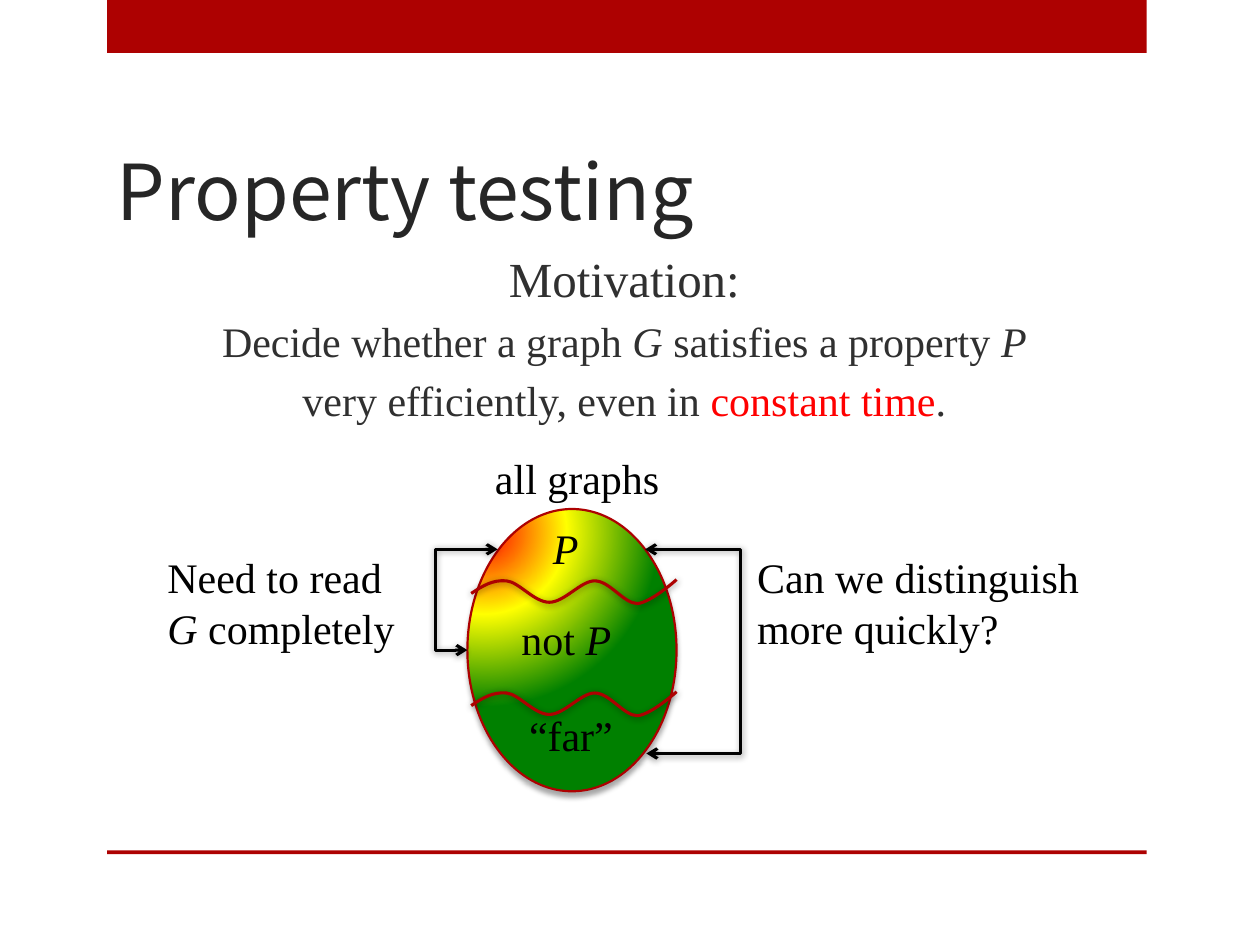
from dataclasses import dataclass
from pptx import Presentation
from pptx.dml.color import RGBColor
from pptx.enum.shapes import MSO_CONNECTOR as Link, MSO_SHAPE as Shape
from pptx.enum.text import MSO_ANCHOR as Anchor, PP_ALIGN as Align
from pptx.oxml import parse_xml
from pptx.util import Inches, Pt


@dataclass(frozen=True)
class Theme:
    red: str = "AD0101"
    title: str = "262626"
    body: str = "303030"
    accent: str = "FF0000"
    black: str = "000000"
    title_font: str = "Noto Sans CJK JP"
    body_font: str = "Times New Roman"
    title_size: int = 44
    lead_size: int = 28
    text_size: int = 24
    outline: float = 1.25
    stroke: float = 1.75
    gradient: tuple = ((0, "FF0000"), (47, "FFFF00"), (100, "008000"))
    glow_center: int = 8


THEME = Theme()
NAMESPACE = 'xmlns:a="http://schemas.openxmlformats.org/drawingml/2006/main"'

BARS = [(0.85, 0, 8.25, 0.42), (0.85, 6.75, 8.25, 0.03)]
TITLE = [[("Property testing", "")]]
MOTIVATION = [
    [("Motivation:", "lead")],
    [("Decide whether a graph ", ""), ("G", "italic"),
     (" satisfies a property ", ""), ("P", "italic")],
    [("very efficiently, even in ", ""), ("constant time", "accent"), (".", "")],
]
LABELS = [
    ((4.29, 4.1, 0.51, 0.5), [[("P", "italic")]]),
    ((3.83, 3.54, 1.52, 0.5), [[("all graphs", "")]]),
    ((1.23, 4.33, 2.05, 0.91),
     [[("Need to read", "")], [("G ", "italic"), ("completely", "")]]),
    ((4.04, 4.82, 1, 0.5), [[("not ", ""), ("P", "italic")]]),
    ((4.1, 5.58, 0.88, 0.5), [[("“far”", "")]]),
    ((5.91, 4.33, 2.78, 0.91),
     [[("Can we distinguish", "")], [("more quickly?", "")]]),
]
ALL_GRAPHS = (3.71, 4.04, 1.66, 2.24)
WAVE_TOPS = [4.6, 5.49]
WAVE_START = (3.74, 0.11)
WAVE_CURVES = [
    ((3.83, 0.05), (3.91, 0), (4.02, 0.01)),
    ((4.12, 0.02), (4.24, 0.18), (4.36, 0.18)),
    ((4.48, 0.18), (4.61, 0.01), (4.72, 0.01)),
    ((4.84, 0.01), (4.95, 0.19), (5.06, 0.19)),
    ((5.17, 0.18), (5.37, 0), (5.37, 0)),
]
BRACKETS = [
    ((3.95, 4.36), (3.71, 5.16), 3.46),
    ((5.12, 4.36), (5.13, 5.98), 5.89),
]


def color(value):
    return RGBColor.from_string(value)


def set_line(shape, value, width):
    shape.line.color.rgb = color(value)
    shape.line.width = Pt(width)


def add_shadow(shape, alpha, blur, distance, angle):
    shape._element.spPr.append(parse_xml(
        f'<a:effectLst {NAMESPACE}><a:outerShdw blurRad="{Pt(blur)}" '
        f'dist="{Pt(distance)}" dir="{angle * 60000}" rotWithShape="0">'
        f'<a:srgbClr val="{THEME.black}"><a:alpha val="{alpha * 1000}"/>'
        '</a:srgbClr></a:outerShdw></a:effectLst>'))


def add_text(page, place, paragraphs, ink=THEME.black, font=THEME.body_font,
             size=THEME.text_size, wrap=False, anchor=Anchor.TOP,
             align=Align.LEFT, before=0):
    frame = page.shapes.add_textbox(*map(Inches, place)).text_frame
    frame.word_wrap = wrap
    frame.vertical_anchor = anchor
    for index, pieces in enumerate(paragraphs):
        para = frame.add_paragraph() if index else frame.paragraphs[0]
        para.alignment = align
        para.space_before = Pt(before)
        for words, style in pieces:
            span = para.add_run()
            span.text = words
            span.font.name = font
            span.font.size = Pt(THEME.lead_size if style == "lead" else size)
            span.font.italic = style == "italic"
            span.font.color.rgb = color(THEME.accent if style == "accent" else ink)


def add_bar(page, place):
    bar = page.shapes.add_shape(Shape.RECTANGLE, *map(Inches, place))
    bar.shadow.inherit = False
    bar.fill.solid()
    bar.fill.fore_color.rgb = color(THEME.red)
    bar.line.fill.background()


def add_graph_set(page):
    oval = page.shapes.add_shape(Shape.OVAL, *map(Inches, ALL_GRAPHS))
    stops = "".join(f'<a:gs pos="{position * 1000}"><a:srgbClr val="{value}"/></a:gs>'
                    for position, value in THEME.gradient)
    near = THEME.glow_center * 1000
    far = 100000 - near
    oval._element.spPr.append(parse_xml(
        f'<a:gradFill {NAMESPACE} rotWithShape="1"><a:gsLst>{stops}</a:gsLst>'
        f'<a:path path="circle"><a:fillToRect l="{near}" t="{near}" '
        f'r="{far}" b="{far}"/></a:path></a:gradFill>'))
    set_line(oval, THEME.red, THEME.outline)
    add_shadow(oval, 35, 3, 3, 90)


def add_wave(page, top):
    start, *points = [(Inches(x), Inches(top + y)) for x, y in
                      [WAVE_START] + [point for curve in WAVE_CURVES for point in curve]]
    builder = page.shapes.build_freeform(*start)
    builder.add_line_segments(points, close=False)
    wave = builder.convert_to_shape()
    segments = wave._element.xpath(".//a:lnTo")
    outline = segments[0].getparent()
    for index in range(0, len(segments), 3):
        curve = parse_xml(f'<a:cubicBezTo {NAMESPACE}/>')
        for segment in segments[index:index + 3]:
            curve.append(segment[0])
            outline.remove(segment)
        outline.append(curve)
    wave.fill.background()
    set_line(wave, THEME.red, THEME.stroke)
    add_shadow(wave, 40, 4, 1, 88)


def add_bracket(page, start, end, turn):
    bracket = page.shapes.add_connector(Link.ELBOW, *map(Inches, start + end))
    bend = round((turn - start[0]) / (end[0] - start[0]) * 100000)
    guides = bracket._element.spPr.prstGeom.get_or_add_avLst()
    guides.append(parse_xml(f'<a:gd {NAMESPACE} name="adj1" fmla="val {bend}"/>'))
    set_line(bracket, THEME.black, THEME.stroke)
    for tag in ("headEnd", "tailEnd"):
        bracket.line._get_or_add_ln().append(
            parse_xml(f'<a:{tag} {NAMESPACE} type="arrow"/>'))
    add_shadow(bracket, 40, 4, 1, 88)


def main():
    deck = Presentation()
    deck.slide_width, deck.slide_height = Inches(10), Inches(7.5)
    page = deck.slides.add_slide(deck.slide_layouts[6])
    for place in BARS:
        add_bar(page, place)
    add_text(page, (0.83, 0.75, 8.25, 1.17), TITLE, THEME.title, THEME.title_font,
             THEME.title_size, wrap=True, anchor=Anchor.BOTTOM)
    add_text(page, (0.83, 1.92, 8.25, 4.83), MOTIVATION, THEME.body,
             wrap=True, align=Align.CENTER, before=4.8)
    add_graph_set(page)
    for top in WAVE_TOPS:
        add_wave(page, top)
    for bracket in BRACKETS:
        add_bracket(page, *bracket)
    for place, paragraphs in LABELS:
        add_text(page, place, paragraphs)
    deck.save("out.pptx")


if __name__ == "__main__":
    main()
